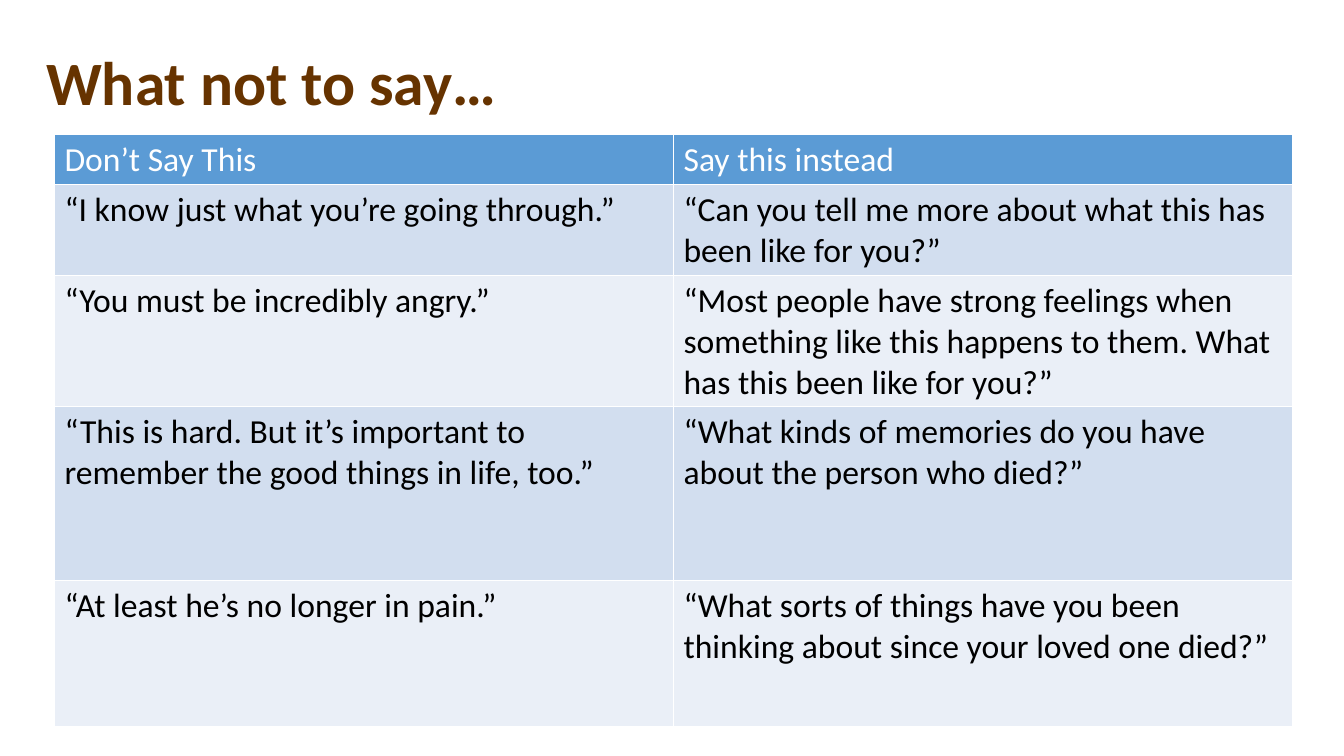
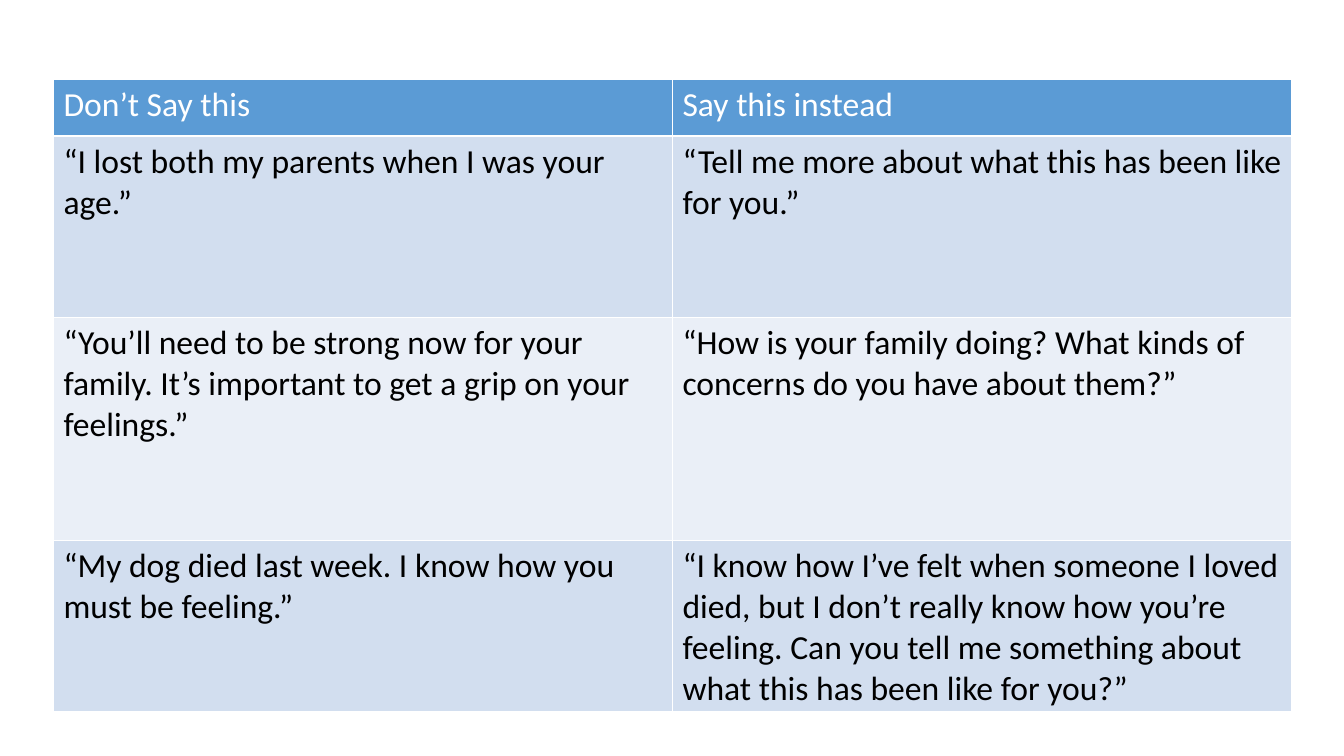
from lxml.etree import SubElement
from pptx import Presentation
from pptx.dml.color import RGBColor
from pptx.enum.text import MSO_ANCHOR as ANCHOR
from pptx.oxml.ns import qn
from pptx.util import Inches, Pt

FONT = "Calibri"
WHITE, BLACK, BROWN = "FFFFFF", "000000", "663300"
HEADER, BANDS = "5B9BD5", ("D2DEEF", "EAEFF7")
COL_W = 6.14

PHRASES = [
    ("Don’t Say This", "Say this instead"),
    ("“I know just what you’re going through.”",
     "“Can you tell me more about what this has been like for you?”"),
    ("“You must be incredibly angry.”",
     "“Most people have strong feelings when something like this happens "
     "to them. What has this been like for you?”"),
    ("“This is hard. But it’s important to remember the good things in life, too.”",
     "“What kinds of memories do you have about the person who died?”"),
    ("“At least he’s no longer in pain.”",
     "“What sorts of things have you been thinking about since your loved one died?”"),
]
MORE_PHRASES = [
    ("Don’t Say this", "Say this instead"),
    ("“I lost both my parents when I was your age.”",
     "“Tell me more about what this has been like for you.”"),
    ("“You’ll need to be strong now for your family. It’s important to get "
     "a grip on your feelings.”",
     "“How is your family doing? What kinds of concerns do you have about them?”"),
    ("“My dog died last week. I know how you must be feeling.”",
     "“I know how I’ve felt when someone I loved died, but I don’t really know "
     "how you’re feeling. Can you tell me something about what this has been "
     "like for you?”"),
]


def rgb(color):
    """Turn a hex string into a colour."""
    return RGBColor.from_string(color)


def write(tf, text, size=24, color=BLACK, bold=False, spacing=1.0):
    """Put one formatted paragraph in a text frame."""
    p = tf.paragraphs[0]
    p.line_spacing = spacing
    r = p.add_run()
    r.text = text
    r.font.name, r.font.size, r.font.bold = FONT, Pt(size), bold
    r.font.color.rgb = rgb(color)


def add_title(s, text):
    """Add the slide title."""
    sp = s.shapes.add_textbox(Inches(0.36), Inches(0.12), Inches(11.5), Inches(1.45))
    tf = sp.text_frame
    tf.word_wrap = True
    tf.vertical_anchor = ANCHOR.MIDDLE
    write(tf, text, size=44, color=BROWN, bold=True, spacing=0.9)


def add_borders(cell, color=WHITE, width=1):
    """Draw a line on each side of a cell."""
    tc_pr = cell._tc.get_or_add_tcPr()
    for side in "LRTB":
        ln = SubElement(tc_pr, qn(f"a:ln{side}"), w=str(Pt(width)))
        SubElement(SubElement(ln, qn("a:solidFill")), qn("a:srgbClr"), val=color)


def add_phrase_table(s, left, top, heights, rows):
    """Add a two-column table with a header and banded rows."""
    table = s.shapes.add_table(
        len(rows), 2, Inches(left), Inches(top),
        Inches(2 * COL_W), Inches(sum(heights))).table
    for col in table.columns:
        col.width = Inches(COL_W)
    for i, (height, texts) in enumerate(zip(heights, rows)):
        table.rows[i].height = Inches(height)
        fill = BANDS[(i - 1) % 2] if i else HEADER
        for cell, text in zip(table.rows[i].cells, texts):
            add_borders(cell)
            cell.fill.solid()
            cell.fill.fore_color.rgb = rgb(fill)
            write(cell.text_frame, text, color=BLACK if i else WHITE)


def main():
    """Build and save the slides."""
    prs = Presentation()
    prs.slide_width, prs.slide_height = Inches(13.33), Inches(7.5)
    blank = prs.slide_layouts[6]

    s = prs.slides.add_slide(blank)
    add_title(s, "What not to say…")
    add_phrase_table(s, 0.54, 1.33, (0.46, 0.83, 1.19, 1.73, 1.45), PHRASES)

    s = prs.slides.add_slide(blank)
    add_phrase_table(s, 0.53, 0.79, (0.56, 1.8, 2.21, 1.38), MORE_PHRASES)

    prs.save("out.pptx")


if __name__ == "__main__":
    main()
